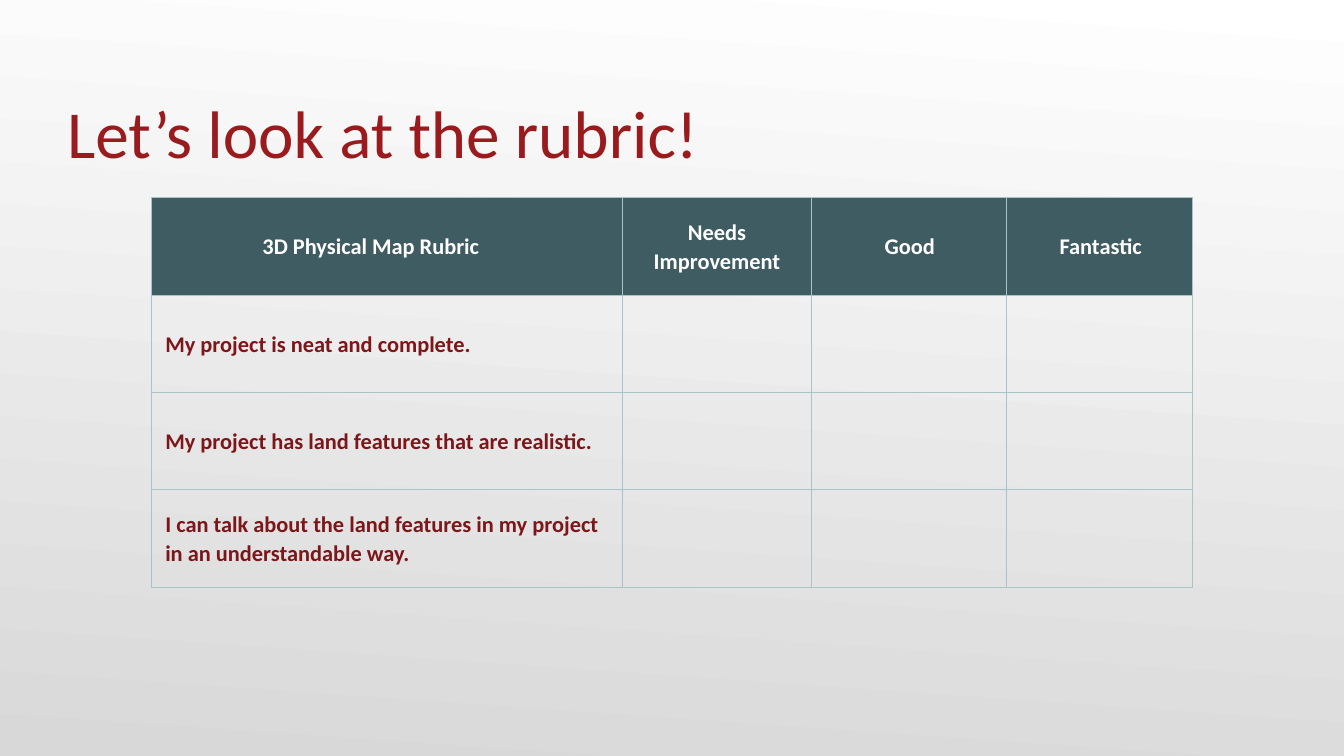
from pptx import Presentation
from pptx.dml.color import RGBColor
from pptx.enum.text import MSO_ANCHOR as Anchor, MSO_AUTO_SIZE as AutoSize, PP_ALIGN as Align
from pptx.oxml import parse_xml
from pptx.oxml.ns import nsdecls
from pptx.util import Inches, Pt

WHITE = RGBColor(0xFF, 0xFF, 0xFF)
LIGHT_GRAY = RGBColor(0xD8, 0xD8, 0xD8)
RED = RGBColor(0x99, 0x1B, 0x1E)
DARK_RED = RGBColor(0x7D, 0x16, 0x19)
TEAL = RGBColor(0x3E, 0x5C, 0x61)
BORDER = RGBColor(0xA9, 0xC4, 0xC8)


def write_text(frame, text, size=12, color=DARK_RED, bold=True,
               align=Align.LEFT, line_spacing=1.07):
    paragraph = frame.paragraphs[0]
    paragraph.alignment = align
    paragraph.line_spacing = line_spacing
    run = paragraph.add_run()
    run.text = text
    run.font.name = "Calibri"
    run.font.size = Pt(size)
    run.font.bold = bold
    run.font.color.rgb = color


def add_borders(cell):
    properties = cell._tc.get_or_add_tcPr()
    for position, side in enumerate(("lnL", "lnR", "lnT", "lnB")):
        line = parse_xml(
            f'<a:{side} {nsdecls("a")} w="{Pt(0.5)}"><a:solidFill>'
            f'<a:srgbClr val="{BORDER}"/></a:solidFill></a:{side}>')
        properties.insert(position, line)


presentation = Presentation()
presentation.slide_width = Inches(10)
presentation.slide_height = Inches(10 * 9 / 16)
slide = presentation.slides.add_slide(presentation.slide_layouts[5])

background = slide.background.fill
background.gradient()
background.gradient_angle = 266
for stop, color, position in zip(background.gradient_stops, (WHITE, LIGHT_GRAY), (0, 1)):
    stop.color.rgb = color
    stop.position = position

title = slide.shapes.title
title.left, title.top = Inches(0.5), Inches(0.34)
title.width, title.height = Inches(9), Inches(0.94)
title_frame = title.text_frame
title_frame.auto_size = AutoSize.NONE
title_frame.word_wrap = True
title_frame.vertical_anchor = Anchor.BOTTOM
title_frame.margin_left = title_frame.margin_right = title_frame.margin_bottom = 0
title_frame.margin_top = Inches(0.05)
write_text(title_frame, "Let’s look at the rubric!", size=36, color=RED, bold=False,
           line_spacing=1.0)

columns = [
    ("3D Physical Map Rubric", 3.5, 0.1, 0.34),
    ("Needs Improvement", 1.41, 0.1, 0.1),
    ("Good", 1.45, 0.11, 0.1),
    ("Fantastic", 1.38, 0.12, 0.1),
]
criteria = [
    "My project is neat and complete.",
    "My project has land features that are realistic.",
    "I can talk about the land features in my project in an understandable way.",
]

table = slide.shapes.add_table(
    len(criteria) + 1, len(columns),
    Inches(1.13), Inches(1.47), Inches(7.74), Inches(2.9)).table
table.horz_banding = False

for cell in table.iter_cells():
    cell.fill.background()
    cell.vertical_anchor = Anchor.MIDDLE
    add_borders(cell)

for column_index, (heading, width, margin_left, margin_right) in enumerate(columns):
    table.columns[column_index].width = Inches(width)
    cell = table.cell(0, column_index)
    cell.fill.solid()
    cell.fill.fore_color.rgb = TEAL
    cell.margin_left, cell.margin_right = Inches(margin_left), Inches(margin_right)
    write_text(cell.text_frame, heading, color=WHITE, align=Align.CENTER)

for row_index, criterion in enumerate(criteria, start=1):
    write_text(table.cell(row_index, 0).text_frame, criterion)

presentation.save("out.pptx")
